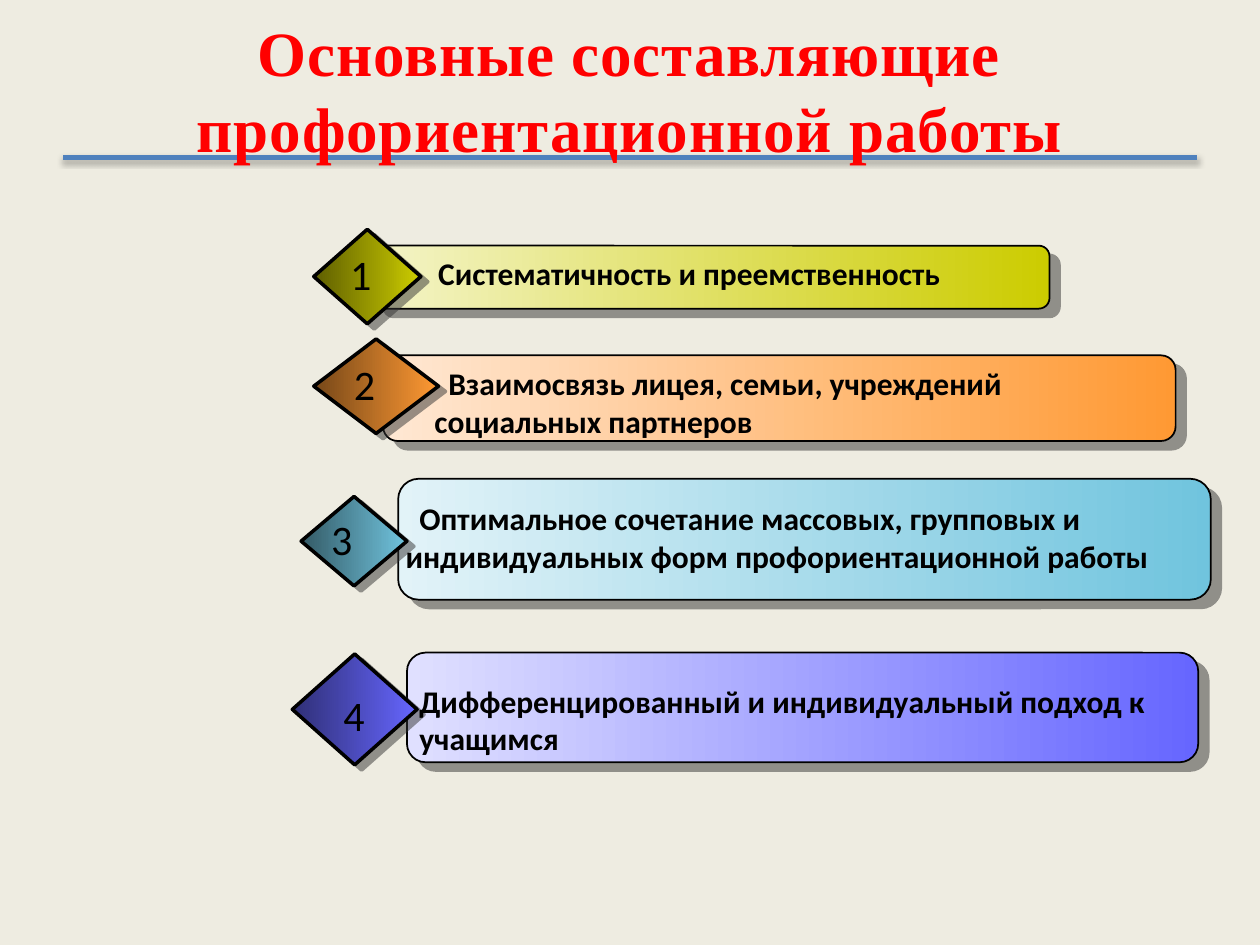
import pptx
import pptx.util
import pptx.dml.color
import pptx.enum.shapes
import pptx.enum.text
import lxml.etree

Inches = pptx.util.Inches
Pt = pptx.util.Pt
SHAPE = pptx.enum.shapes.MSO_SHAPE
ALIGN = pptx.enum.text.PP_ALIGN
ANCHOR = pptx.enum.text.MSO_ANCHOR
DRAWING = "http://schemas.openxmlformats.org/drawingml/2006/main"

TITLE = "Основные составляющие профориентационной работы"

ITEMS = [
    {
        "number": "1", "number_at": (2.68, 1.92, 0.33, 0.5), "number_align": ALIGN.LEFT,
        "bar": (2.96, 1.95, 5.37, 0.5), "diamond": (2.49, 1.82, 0.85, 0.75),
        "label_at": (3.38, 1.97, 6.6, 0.4),
        "lines": [("Систематичность и преемственность", 0)],
    },
    {
        "number": "2", "number_at": (2.71, 2.8, 0.51, 0.5), "number_align": ALIGN.LEFT,
        "bar": (3.04, 2.82, 6.29, 0.68), "diamond": (2.49, 2.69, 0.99, 0.75),
        "label_at": (2.5, 2.84, 6.83, 0.71),
        "lines": [("Взаимосвязь лицея, семьи, учреждений", 0.96),
                  ("социальных партнеров", 0.85)],
    },
    {
        "number": "3", "number_at": (2.53, 4.03, 0.81, 0.5), "number_align": ALIGN.LEFT,
        "bar": (3.16, 3.8, 6.45, 0.96), "diamond": (2.39, 3.94, 0.84, 0.71),
        "label_at": (2.5, 3.91, 7.08, 0.71),
        "lines": [("Оптимальное сочетание массовых, групповых и", 0.73),
                  ("индивидуальных форм профориентационной работы", 0.62)],
    },
    {
        "number": "4", "number_at": (2.5, 5.42, 0.62, 0.51), "number_align": ALIGN.CENTER,
        "bar": (3.23, 5.18, 6.28, 0.87), "diamond": (2.32, 5.19, 0.99, 0.88),
        "label_at": (3.23, 5.36, 6.53, 0.71),
        "lines": [("Дифференцированный и индивидуальный подход к учащимся", 0)],
    },
]

THEME = {
    "background": "EEECE1", "rule": "4F81BD", "title": "FF0000", "ink": "000000",
    "title_font": "Times New Roman", "body_font": "Calibri",
    "title_size": 36, "number_size": 24, "label_size": 18,
    "rule_shadow": ("000000", 35, 3.1, 1.8, 90),
    "bar_shadow": ("333333", 50, 0, 7.8, 40),
    "diamond_shadow": ("333333", 50, 0, 5, 37),
    "accents": [
        {"light": "F4F4C8", "dark": "5E5E00", "full": "CCCC00"},
        {"light": "FFE8D4", "dark": "764718", "full": "FF9933"},
        {"light": "E2F3F8", "dark": "345A66", "full": "70C4DE"},
        {"light": "E0E0FF", "dark": "2F2F76", "full": "6666FF"},
    ],
}


def rgb(value):
    return pptx.dml.color.RGBColor.from_string(value)


def place(area):
    return [Inches(length) for length in area]


def add_shadow(properties, shadow):
    color, opacity, blur, distance, angle = shadow
    effects = properties.find(f"{{{DRAWING}}}effectLst")
    if effects is None:
        effects = lxml.etree.SubElement(properties, f"{{{DRAWING}}}effectLst")
    outer = lxml.etree.SubElement(
        effects, f"{{{DRAWING}}}outerShdw", blurRad=str(int(Pt(blur))),
        dist=str(int(Pt(distance))), dir=str(angle * 60000), algn="ctr", rotWithShape="0")
    tint = lxml.etree.SubElement(outer, f"{{{DRAWING}}}srgbClr", val=color)
    lxml.etree.SubElement(tint, f"{{{DRAWING}}}alpha", val=str(opacity * 1000))


def add_panel(shapes, preset, area, colors, line_width, shadow):
    panel = shapes.add_shape(preset, *place(area))
    panel.fill.gradient()
    panel.fill.gradient_angle = 0
    for stop, color, position in zip(panel.fill.gradient_stops, colors, (0, 1)):
        stop.color.rgb = rgb(color)
        stop.position = position
    panel.line.color.rgb = rgb(THEME["ink"])
    panel.line.width = Pt(line_width)
    panel.shadow.inherit = False
    add_shadow(panel.element.spPr, shadow)
    return panel


def add_text(shapes, area, lines, font, size, color, bold=False, align=ALIGN.LEFT):
    box = shapes.add_textbox(*place(area))
    frame = box.text_frame
    frame.word_wrap = True
    frame.text = "\n".join(text for text, indent in lines)
    for para, (text, indent) in zip(frame.paragraphs, lines):
        para.alignment = align
        if indent:
            para._p.get_or_add_pPr().set("marL", str(int(Inches(indent))))
        for span in para.runs:
            span.font.name = font
            span.font.size = Pt(size)
            span.font.bold = bold
            span.font.color.rgb = rgb(color)
    return box


def add_item(page, item, accent):
    shapes = page.shapes.add_group_shape().shapes
    bar = add_panel(shapes, SHAPE.ROUNDED_RECTANGLE, item["bar"],
                    (accent["light"], accent["full"]), 1, THEME["bar_shadow"])
    bar.adjustments[0] = 0.17
    add_panel(shapes, SHAPE.DIAMOND, item["diamond"],
              (accent["dark"], accent["full"]), 2, THEME["diamond_shadow"])
    add_text(shapes, item["label_at"], item["lines"], THEME["body_font"],
             THEME["label_size"], THEME["ink"], bold=True)
    add_text(shapes, item["number_at"], [(item["number"], 0)], THEME["body_font"],
             THEME["number_size"], THEME["ink"], align=item["number_align"])


def add_heading(page):
    rule = page.shapes.add_connector(pptx.enum.shapes.MSO_CONNECTOR.STRAIGHT,
                                     *place((0.5, 1.25, 9.5, 1.25)))
    rule.line.color.rgb = rgb(THEME["rule"])
    rule.line.width = Pt(3)
    add_shadow(rule._element.spPr, THEME["rule_shadow"])
    box = add_text(page.shapes, (0.5, 0.17, 9, 1.08), [(TITLE, 0)], THEME["title_font"],
                   THEME["title_size"], THEME["title"], bold=True, align=ALIGN.CENTER)
    box.text_frame.vertical_anchor = ANCHOR.MIDDLE
    box.text_frame.paragraphs[0].runs[0]._r.get_or_add_rPr().set("spc", "50")


def main():
    deck = pptx.Presentation()
    deck.slide_width, deck.slide_height = Inches(10), Inches(7.5)
    page = deck.slides.add_slide(deck.slide_layouts[6])
    page.background.fill.solid()
    page.background.fill.fore_color.rgb = rgb(THEME["background"])
    add_heading(page)
    for item, accent in zip(ITEMS, THEME["accents"]):
        add_item(page, item, accent)
    deck.save("out.pptx")


if __name__ == "__main__":
    main()
